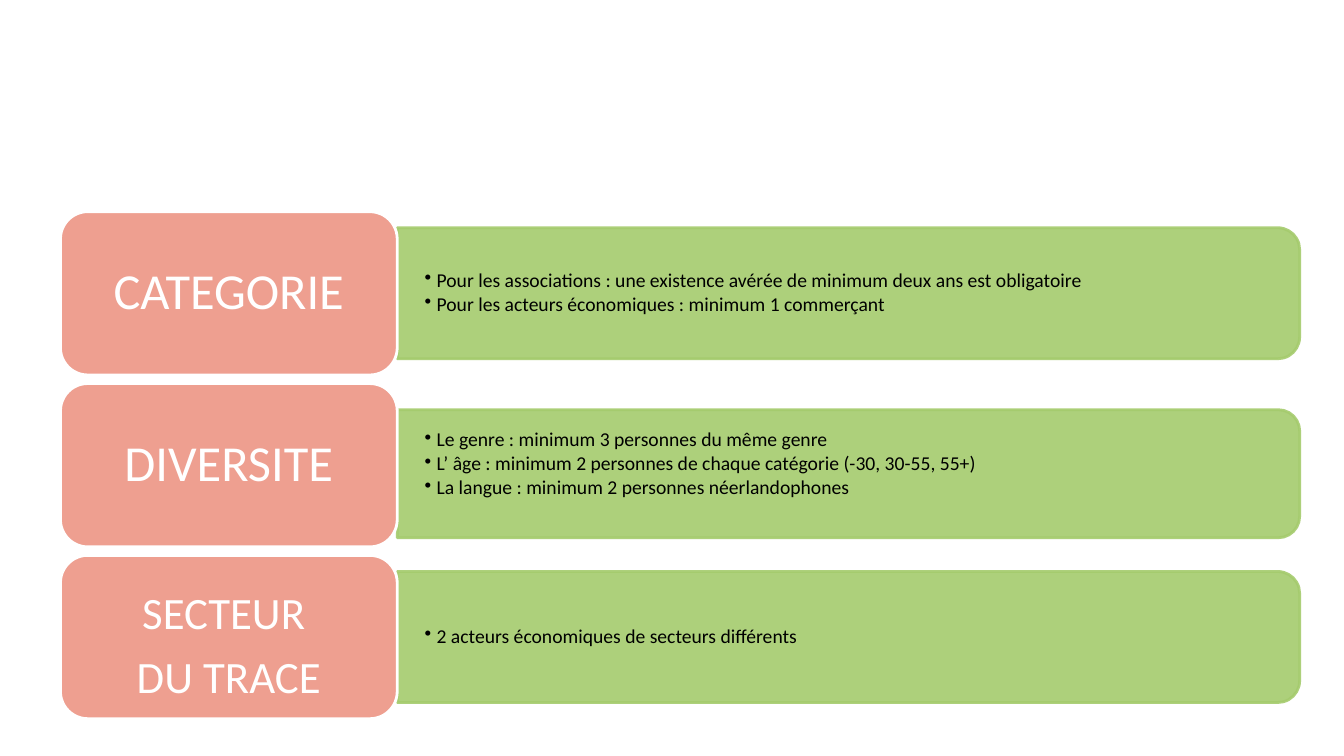
from lxml import etree
from pptx import Presentation
from pptx.dml.color import RGBColor
from pptx.enum.shapes import MSO_SHAPE
from pptx.enum.text import MSO_ANCHOR, PP_ALIGN
from pptx.oxml.ns import qn
from pptx.util import Inches, Pt

ROUNDED = MSO_SHAPE.ROUNDED_RECTANGLE
ROUNDED_TOP = MSO_SHAPE.ROUND_2_SAME_RECTANGLE
MIDDLE = MSO_ANCHOR.MIDDLE
CENTER, LEFT = PP_ALIGN.CENTER, PP_ALIGN.LEFT

# Content: label lines, label size, label shift, bullets, bar centre, bar height, bullet shift
ROWS = [
    (["CATEGORIE"], 36, 0,
     ["Pour les associations\u00a0: une existence avérée de minimum deux ans est obligatoire",
      "Pour les acteurs économiques\u00a0: minimum 1 commerçant"], 2.91, 1.3, 0),
    (["DIVERSITE"], 36, 0,
     ["Le genre : minimum 3 personnes du même genre",
      "L’ âge : minimum 2 personnes de chaque catégorie (-30, 30-55, 55+)",
      "La langue : minimum 2 personnes néerlandophones"], 4.7, 1.27, -0.09),
    (["SECTEUR ", "DU TRACE"], 32, 0.1,
     ["2 acteurs économiques de secteurs différents"], 6.32, 1.3, 0),
]
GREEN, CORAL, WHITE, BLACK = "A5CB6D", "EE9F90", "FFFFFF", "000000"

# Layout in inches
LABEL_LEFT, LABEL_TOP, LABEL_WIDTH, LABEL_HEIGHT = 0.6, 2.1, 3.34, 1.62
LABEL_PITCH = 1.705
BAR_LEFT, BAR_WIDTH = LABEL_LEFT + LABEL_WIDTH, 8.95
TEXT_WIDTH, TEXT_MARGIN = 8.88, 0.13


def color(hex_string):
    return RGBColor.from_string(hex_string)


def add_box(kind, left, top, width, height, fill, line, opacity=100):
    shape = slide.shapes.add_shape(kind, Inches(left), Inches(top), Inches(width), Inches(height))
    shape.shadow.inherit = False
    shape.fill.solid()
    shape.fill.fore_color.rgb = color(fill)
    shape.line.color.rgb = color(line)
    shape.line.width = Pt(2)
    if opacity < 100:
        for solid in shape.element.spPr.iter(qn("a:srgbClr")):
            etree.SubElement(solid, qn("a:alpha"), val=str(opacity * 1000))
    return shape


def write_text(shape, lines, size, font_color, align, side, edge, shift=0, space_after=0, bullet=False):
    frame = shape.text_frame
    frame.word_wrap = True
    frame.vertical_anchor = MIDDLE
    frame.margin_left = frame.margin_right = Inches(side)
    frame.margin_top, frame.margin_bottom = Inches(edge + shift), Inches(edge - shift)
    for index, line in enumerate(lines):
        paragraph = frame.add_paragraph() if index else frame.paragraphs[0]
        paragraph.alignment = align
        paragraph.line_spacing = 0.9
        if index < len(lines) - 1:
            paragraph.space_after = Pt(space_after)
        if bullet:
            properties = paragraph._p.get_or_add_pPr()
            properties.set("marL", str(Inches(0.12)))
            properties.set("indent", str(Inches(-0.12)))
            etree.SubElement(properties, qn("a:buChar"), char="•")
        run = paragraph.add_run()
        run.text = line
        run.font.name = "Calibri"
        run.font.size = Pt(size)
        run.font.color.rgb = color(font_color)


presentation = Presentation()
presentation.slide_width, presentation.slide_height = Inches(13.33), Inches(7.5)
slide = presentation.slides.add_slide(presentation.slide_layouts[6])

for row, (label, label_size, label_shift, bullets, center, height, bullet_shift) in enumerate(ROWS):
    # Green bar: a shape with two rounded top corners, turned to the right
    bar = add_box(ROUNDED_TOP, BAR_LEFT + (BAR_WIDTH - height) / 2, center - BAR_WIDTH / 2,
                  height, BAR_WIDTH, GREEN, GREEN, opacity=90)
    bar.rotation = 90

    # Bullets on the bar
    text_height = height - TEXT_MARGIN
    details = slide.shapes.add_textbox(Inches(BAR_LEFT), Inches(center - text_height / 2),
                                       Inches(TEXT_WIDTH), Inches(text_height))
    write_text(details, bullets, 14, BLACK, LEFT, 0.27, 0.14, shift=bullet_shift,
               space_after=2, bullet=True)

    # Coral label
    tile = add_box(ROUNDED, LABEL_LEFT, LABEL_TOP + row * LABEL_PITCH,
                   LABEL_WIDTH, LABEL_HEIGHT, CORAL, WHITE)
    write_text(tile, label, label_size, WHITE, CENTER, 0.22, 0.15, shift=label_shift, space_after=11)

presentation.save("out.pptx")
